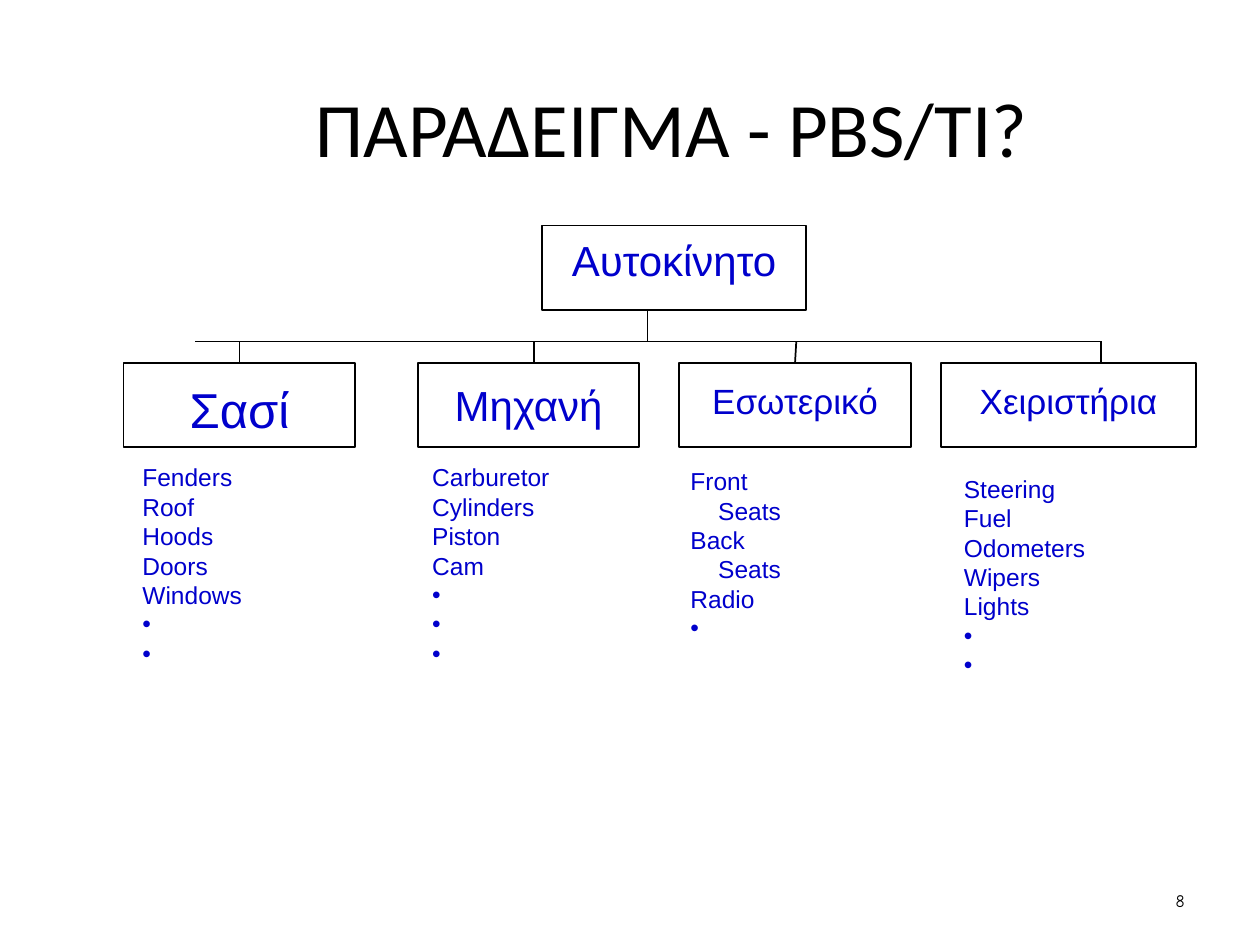
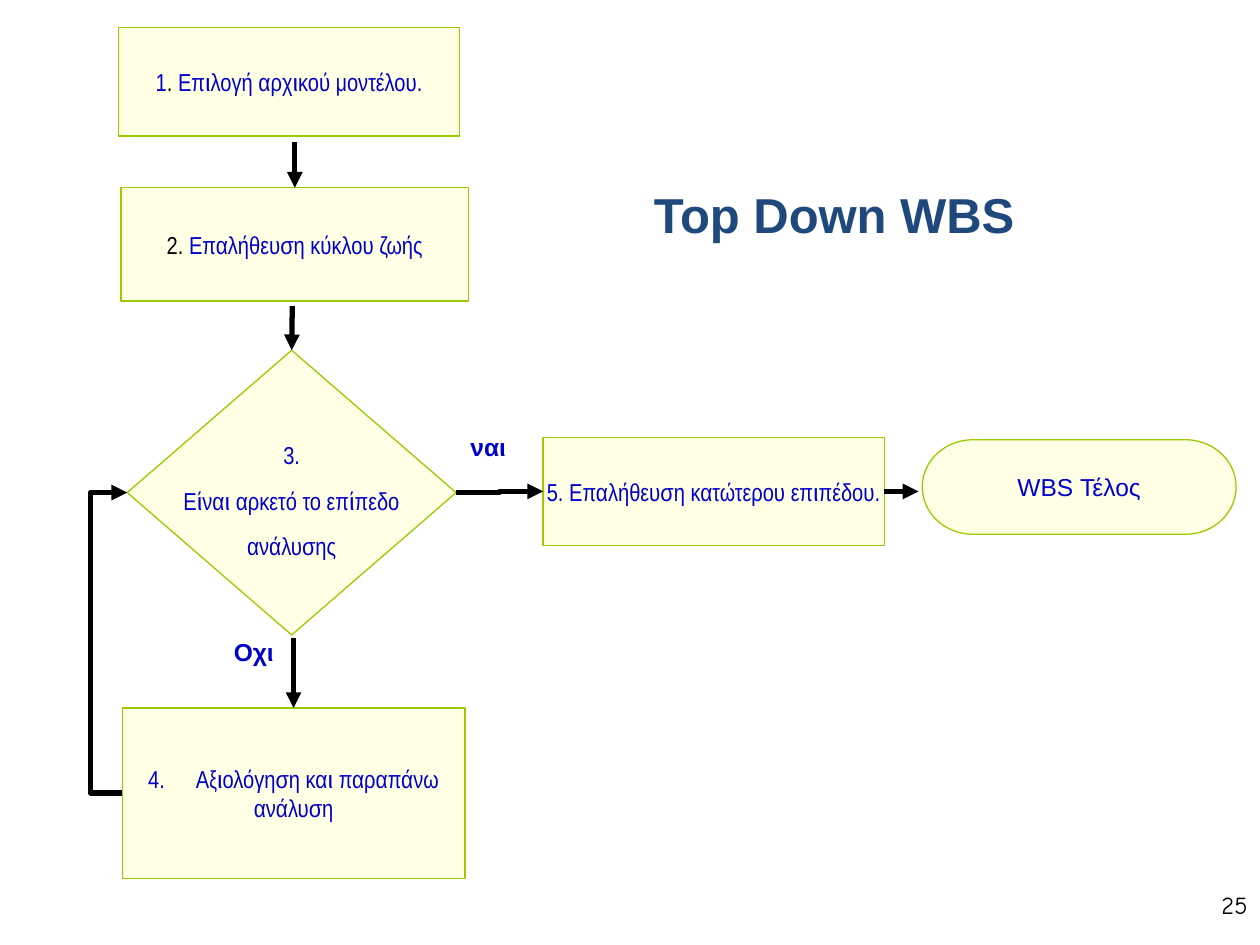
"""Build two slides: a product breakdown tree and a top-down WBS flowchart."""
from dataclasses import dataclass
from typing import Optional

import lxml.etree
import pptx
import pptx.dml.color
import pptx.enum.shapes
import pptx.enum.text
import pptx.oxml.ns
import pptx.util

Inches = pptx.util.Inches
Pt = pptx.util.Pt
ALIGN = pptx.enum.text.PP_ALIGN
ANCHOR = pptx.enum.text.MSO_ANCHOR
SHAPE = pptx.enum.shapes.MSO_SHAPE
CONNECTOR = pptx.enum.shapes.MSO_CONNECTOR
TOP, LEFT, BOTTOM, RIGHT = range(4)

BLUE, BLACK, NAVY = "0000CC", "000000", "1F497D"
CREAM, GREEN = "FFFFCC", "99CC00"
BULLET = " "
ROW_TOP, ROW_HEIGHT, BUS_Y = 2.88, 0.67, 2.71


@dataclass(frozen=True)
class Frame:
    """Position and size in inches."""
    left: float
    top: float
    width: float
    height: float

    def lengths(self) -> list:
        """Return the four values as lengths."""
        return [Inches(value) for value in (self.left, self.top, self.width, self.height)]


@dataclass(frozen=True)
class Style:
    """Look of one paragraph."""
    size: float
    font: str = "Arial"
    color: str = BLUE
    bold: bool = False
    align: ALIGN = ALIGN.CENTER
    line_spacing: Optional[float] = None


@dataclass(frozen=True)
class Branch:
    """One assembly of the car with its components."""
    name: str
    left: float
    width: float
    size: float
    drop_x: float
    list_frame: Frame
    components: tuple


@dataclass(frozen=True)
class Step:
    """One node of the flowchart."""
    name: str
    preset: SHAPE
    frame: Frame
    lines: tuple
    style: Style


NARROW = Style(14, "Arial Narrow")
COMPONENT = Style(14, align=ALIGN.LEFT)

BRANCHES = (
    Branch("Σασί", 0.98, 1.84, 28, 1.9, Frame(1.03, 3.62, 1.74, 2.9),
           ("Fenders", "Roof", "Hoods", "Doors", "Windows", BULLET, BULLET)),
    Branch("Μηχανή", 3.32, 1.75, 24, 4.24, Frame(3.33, 3.62, 1.82, 2.9),
           ("Carburetor", "Cylinders", "Piston", "Cam", BULLET, BULLET, BULLET)),
    Branch("Εσωτερικό", 5.39, 1.84, 20, 6.32, Frame(5.38, 3.65, 1.83, 3.3),
           ("Front\vSeats", "Back\vSeats", "Radio", BULLET)),
    Branch("Χειριστήρια", 7.47, 2.02, 20, 8.74, Frame(7.55, 3.71, 2.1, 2.9),
           ("Steering", "Fuel", "Odometers", "Wipers", "Lights", BULLET, BULLET)),
)

STEPS = (
    Step("select", SHAPE.RECTANGLE, Frame(0.94, 0.22, 2.71, 0.86),
         ((("1", BLUE), (". ", BLACK), ("Επιλογή αρχικού μοντέλου.", BLUE)),), NARROW),
    Step("verify", SHAPE.RECTANGLE, Frame(0.96, 1.49, 2.76, 0.9),
         ((("2. ", BLACK), ("Επαλήθευση κύκλου ζωής", BLUE)),), NARROW),
    Step("decide", SHAPE.DIAMOND, Frame(1.01, 2.78, 2.61, 2.26),
         ("3.", "Είναι αρκετό το επίπεδο", "ανάλυσης"),
         Style(14, "Arial Narrow", line_spacing=26)),
    Step("refine", SHAPE.RECTANGLE, Frame(0.97, 5.62, 2.72, 1.35),
         ("Αξιολόγηση και παραπάνω", "ανάλυση"), NARROW),
    Step("lower", SHAPE.RECTANGLE, Frame(4.31, 3.47, 2.71, 0.86),
         ("5. Επαλήθευση κατώτερου επιπέδου.",), NARROW),
    Step("finish", SHAPE.FLOWCHART_TERMINATOR, Frame(7.32, 3.49, 2.49, 0.75),
         ("WBS Τέλος",), Style(14)),
)


def rgb(color: str) -> pptx.dml.color.RGBColor:
    """Turn a hex string into a colour."""
    return pptx.dml.color.RGBColor.from_string(color)


def add_xml(parent, tag: str, **attributes: str):
    """Append a DrawingML element to a parent element."""
    return lxml.etree.SubElement(parent, pptx.oxml.ns.qn(tag), attributes)


def set_marker(para, tag: str, indent: float = 0, **attributes: str) -> None:
    """Give a styled paragraph its bullet kind and hanging indent."""
    properties = para._p.get_or_add_pPr()
    properties.set("marL", str(Inches(indent)))
    properties.set("indent", str(-Inches(indent)))
    add_xml(properties, tag, **attributes)
    properties.append(properties.find(pptx.oxml.ns.qn("a:defRPr")))


def style_paragraph(para, style: Style) -> None:
    """Apply a style to a whole paragraph."""
    para.alignment = style.align
    para.space_before = Pt(0)
    if style.line_spacing:
        para.line_spacing = Pt(style.line_spacing)
    para.font.name, para.font.size, para.font.bold = style.font, Pt(style.size), style.bold
    para.font.color.rgb = rgb(style.color)


def write(shape, lines: tuple, style: Style, anchor: ANCHOR = ANCHOR.TOP, wrap: bool = True) -> None:
    """Fill a shape with paragraphs given as text or as coloured spans."""
    text_frame = shape.text_frame
    text_frame.word_wrap, text_frame.vertical_anchor = wrap, anchor
    text_frame.auto_size = pptx.enum.text.MSO_AUTO_SIZE.NONE
    for index, line in enumerate(lines):
        para = text_frame.paragraphs[0] if index == 0 else text_frame.add_paragraph()
        if isinstance(line, str):
            para.text = line
        else:
            for text, color in line:
                span = para.add_run()
                span.text = text
                span.font.color.rgb = rgb(color)
        style_paragraph(para, style)


def place(shape, frame: Frame) -> None:
    """Move a placeholder to a frame."""
    shape.left, shape.top, shape.width, shape.height = frame.lengths()


def add_title(page, text: str, frame: Frame, style: Style, anchor: ANCHOR) -> None:
    """Format the title placeholder."""
    place(page.shapes.title, frame)
    write(page.shapes.title, (text,), style, anchor)


def add_text(page, text: str, frame: Frame, style: Style, anchor: ANCHOR = ANCHOR.TOP) -> None:
    """Add a one-line text box."""
    write(page.shapes.add_textbox(*frame.lengths()), (text,), style, anchor)


def add_page_number(page, number: str, frame: Frame, size: float) -> None:
    """Add the number at the lower right."""
    add_text(page, number, frame, Style(size, "Comic Neue", BLACK, align=ALIGN.RIGHT), ANCHOR.MIDDLE)


def add_box(page, preset: SHAPE, frame: Frame, line: str, line_width: float):
    """Add an unfilled, outlined shape without a shadow."""
    box = page.shapes.add_shape(preset, *frame.lengths())
    box.shadow.inherit = False
    box.fill.background()
    box.line.color.rgb, box.line.width = rgb(line), Pt(line_width)
    return box


def add_line(page, start: tuple, end: tuple, width: float, kind: CONNECTOR = CONNECTOR.STRAIGHT,
             source: Optional[tuple] = None, target: Optional[tuple] = None, arrow: bool = False):
    """Add a connector, joined to (shape, side) pairs where given."""
    line = page.shapes.add_connector(kind, *(Inches(value) for value in start + end))
    if source:
        line.begin_connect(*source)
    if target:
        line.end_connect(*target)
    line.line.color.rgb, line.line.width = rgb(BLACK), Pt(width)
    if arrow:
        add_xml(line.line._get_or_add_ln(), "a:tailEnd", type="triangle")
    add_xml(line._element.spPr, "a:effectLst")
    return line


def add_components(placeholder, branch: Branch) -> None:
    """Write the components of a branch into a body placeholder."""
    place(placeholder, branch.list_frame)
    write(placeholder, branch.components, COMPONENT)
    for para, component in zip(placeholder.text_frame.paragraphs, branch.components):
        if component == BULLET:
            set_marker(para, "a:buChar", char="•")
        else:
            set_marker(para, "a:buNone", 0.22 if "\v" in component else 0)


def add_label_box(page, frame: Frame, name: str, size: float, inset: float):
    """Add a tree box with its name."""
    box = add_box(page, SHAPE.RECTANGLE, frame, BLACK, 1)
    box.text_frame.margin_top = Inches(inset)
    write(box, (name,), Style(size))
    return box


def build_tree(deck) -> None:
    """Draw the product breakdown tree."""
    page = deck.slides.add_slide(deck.slide_layouts.get_by_name("Comparison"))
    add_title(page, "ΠΑΡΑΔΕΙΓΜΑ - PBS/ΤΙ?", Frame(0.67, 0.44, 9.33, 1.13),
              Style(44, "Calibri", BLACK), ANCHOR.MIDDLE)
    add_label_box(page, Frame(4.3, 1.79, 2.1, ROW_HEIGHT), "Αυτοκίνητο", 24, 0.07)
    add_line(page, (1.55, BUS_Y), (BRANCHES[-1].drop_x, BUS_Y), 1)
    add_line(page, (5.14, 2.46), (5.14, BUS_Y), 1)
    bodies = [shape for shape in page.placeholders if shape.placeholder_format.idx in range(1, 5)]
    for branch, body in zip(BRANCHES, bodies):
        box = add_label_box(page, Frame(branch.left, ROW_TOP, branch.width, ROW_HEIGHT),
                            branch.name, branch.size, 0.13)
        centered = abs(branch.left + branch.width / 2 - branch.drop_x) < 0.02
        add_line(page, (branch.drop_x, BUS_Y), (branch.drop_x, ROW_TOP), 1,
                 target=(box, TOP) if centered else None)
        add_components(body, branch)
    add_page_number(page, "8", Frame(7.17, 6.95, 2.33, 0.4), 10)


def add_step(page, step: Step):
    """Draw one half-transparent flowchart node."""
    box = add_box(page, step.preset, step.frame, GREEN, 0.75)
    box.fill.solid()
    box.fill.fore_color.rgb = rgb(CREAM)
    color = box._element.spPr.find(".//" + pptx.oxml.ns.qn("a:srgbClr"))
    add_xml(color, "a:alpha", val="50000")
    write(box, step.lines, step.style, ANCHOR.MIDDLE, wrap=False)
    return box


def build_flowchart(deck) -> None:
    """Draw the top-down WBS flowchart."""
    page = deck.slides.add_slide(deck.slide_layouts.get_by_name("Title Only"))
    add_title(page, "Top Down WBS", Frame(4.69, 0.85, 3.86, 1.13),
              Style(28, color=NAVY, bold=True), ANCHOR.BOTTOM)
    boxes = {step.name: add_step(page, step) for step in STEPS}
    set_marker(boxes["refine"].text_frame.paragraphs[0], "a:buAutoNum", 0.38,
               type="arabicPeriod", startAt="4")

    for x, start_y, end_y, name in ((2.34, 1.13, 1.49, "verify"), (2.32, 2.43, 2.78, "decide"),
                                    (2.33, 5.06, 5.62, "refine")):
        add_line(page, (x, start_y), (x, end_y), 3, target=(boxes[name], TOP), arrow=True)
    add_line(page, (7.02, 3.9), (7.29, 3.9), 3, source=(boxes["lower"], RIGHT), arrow=True)
    add_line(page, (3.62, 3.91), (4.31, 3.9), 3, CONNECTOR.ELBOW,
             (boxes["decide"], RIGHT), (boxes["lower"], LEFT), arrow=True)
    loop = add_line(page, (0.97, 6.3), (1.01, 3.91), 3, CONNECTOR.ELBOW,
                    (boxes["refine"], LEFT), (boxes["decide"], LEFT), arrow=True)
    guides = loop._element.spPr.prstGeom.get_or_add_avLst()
    add_xml(guides, "a:gd", name="adj1", fmla="val -625000")

    answer = Style(14, bold=True)
    add_text(page, "ναι", Frame(3.47, 3.38, 0.81, 0.34), answer)
    add_text(page, "Οχι", Frame(1.68, 5.01, 0.67, 0.34), answer)
    add_page_number(page, "25", Frame(9.41, 7.07, 0.59, 0.22), 14)


def main() -> None:
    """Build and save the deck."""
    deck = pptx.Presentation()
    deck.slide_width, deck.slide_height = Inches(10), Inches(7.5)
    build_tree(deck)
    build_flowchart(deck)
    deck.save("out.pptx")


if __name__ == "__main__":
    main()
